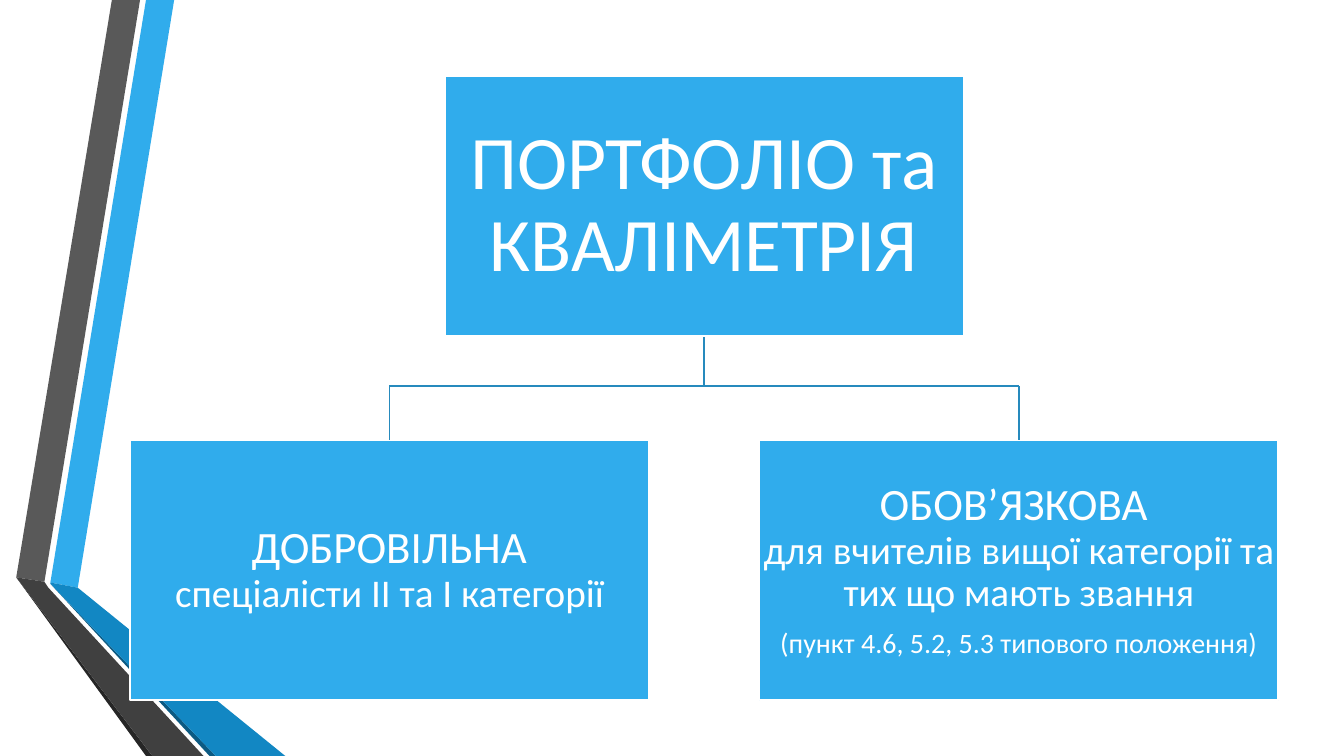
import pptx
import pptx.util
import pptx.dml.color
import pptx.enum.shapes
import pptx.enum.text
from lxml import etree

Cm, Pt = pptx.util.Cm, pptx.util.Pt
WIDE, HIGH = 33.87, 19.05
INK = {
    "sky": "30ACEC", "gray": "595959", "night": "262626", "navy": "0C5A82",
    "blue": "1287C3", "coal": "404040", "line": "268ABD", "white": "FFFFFF",
}
# Ribbon strips in cm, back to front
STRIPS = [
    ("sky", [(1.27, 14.68), (1.96, 14.81), (4.39, 0), (3.68, 0)]),
    ("gray", [(3.53, 0), (2.82, 0), (0.41, 14.55), (1.12, 14.66)]),
    ("night", [(0.41, 14.55), (3.68, HIGH), (3.84, HIGH)]),
    ("navy", [(1.27, 14.71), (5.28, HIGH), (5.44, HIGH)]),
    ("blue", [(1.27, 14.71), (5.44, HIGH), (7.19, HIGH), (1.96, 14.81), (1.27, 14.68)]),
    ("coal", [(5.13, HIGH), (1.22, 14.81), (1.12, 14.66), (0.41, 14.55), (3.84, HIGH)]),
]
# Each card is a list of paragraphs, each paragraph a list of (line, size)
ROOT = [[("ПОРТФОЛІО та КВАЛІМЕТРІЯ", 54)]]
KIDS = [
    [[("ДОБРОВІЛЬНА", 32), ("спеціалісти ІІ та І категорії", 28)]],
    [[("ОБОВ’ЯЗКОВА ", 32),
      ("для вчителів вищої категорії та тих що мають звання", 28)],
     [("(пункт 4.6, 5.2, 5.3 типового положення)", 20)]],
]


def tint(name):
    return pptx.dml.color.RGBColor.from_string(INK[name])


def paint(shape, fill, edge=None):
    shape.shadow.inherit = False
    shape.fill.solid()
    shape.fill.fore_color.rgb = tint(fill)
    if edge:
        shape.line.color.rgb = tint(edge)
        shape.line.width = Pt(1.25)
    else:
        shape.line.fill.background()


def write(para, text, size=28, font="Calibri", color="white"):
    run = para.add_run()
    run.text = text
    run.font.size = Pt(size)
    run.font.name = font
    run.font.color.rgb = tint(color)


def card(slide, x, y, w, h, paras, inset):
    box = slide.shapes.add_shape(
        pptx.enum.shapes.MSO_SHAPE.RECTANGLE, Cm(x), Cm(y), Cm(w), Cm(h))
    paint(box, "sky", "white")
    frame = box.text_frame
    frame.word_wrap = True
    frame.vertical_anchor = pptx.enum.text.MSO_ANCHOR.MIDDLE
    frame.margin_left = frame.margin_right = Cm(inset)
    frame.margin_top = frame.margin_bottom = Cm(inset)
    for i, lines in enumerate(paras):
        para = frame.add_paragraph() if i else frame.paragraphs[0]
        para.alignment = pptx.enum.text.PP_ALIGN.CENTER
        para.line_spacing = 0.9
        para.space_after = Pt(10 if i < len(paras) - 1 else 0)
        for j, (text, size) in enumerate(lines):
            if j:
                para.add_line_break()
            write(para, text, size=size)


def wire(slide, x1, y1, x2, y2):
    line = slide.shapes.add_connector(
        pptx.enum.shapes.MSO_CONNECTOR.STRAIGHT, Cm(x1), Cm(y1), Cm(x2), Cm(y2))
    line.line.color.rgb = tint("line")
    line.line.width = Pt(1.25)
    props = line.element.spPr
    etree.SubElement(props, pptx.oxml.ns.qn("a:effectLst"))


def ribbon(slide, x, y):
    for color, dots in STRIPS:
        spots = [(Cm(x + a), Cm(y + b)) for a, b in dots]
        form = slide.shapes.build_freeform(*spots[0])
        form.add_line_segments(spots[1:], close=True)
        paint(form.convert_to_shape(), color)


def tree(slide, x, y, w, h):
    wide, high = 13.07, 6.55
    mid, low = x + w / 2, y + h - high
    step = (w - wide) / (len(KIDS) - 1)
    lefts = [x + i * step for i in range(len(KIDS))]
    mids = [left + wide / 2 for left in lefts]
    bar = y + high + 1.27

    # Branches
    wire(slide, mid, y + high, mid, bar)
    wire(slide, mids[0], bar, mids[-1], bar)
    for spot in mids:
        wire(slide, spot, bar, spot, low)

    # Cards
    card(slide, mid - wide / 2, y, wide, high, ROOT, 0.1)
    for left, paras in zip(lefts, KIDS):
        card(slide, left, low, wide, high, paras, 0.05)


def main():
    deck = pptx.Presentation()
    deck.slide_width, deck.slide_height = Cm(WIDE), Cm(HIGH)
    slide = deck.slides.add_slide(deck.slide_layouts[6])
    ribbon(slide, 0, 0)
    tree(slide, 3.28, 1.91, 28.93, 15.74)
    deck.save("out.pptx")


if __name__ == "__main__":
    main()
